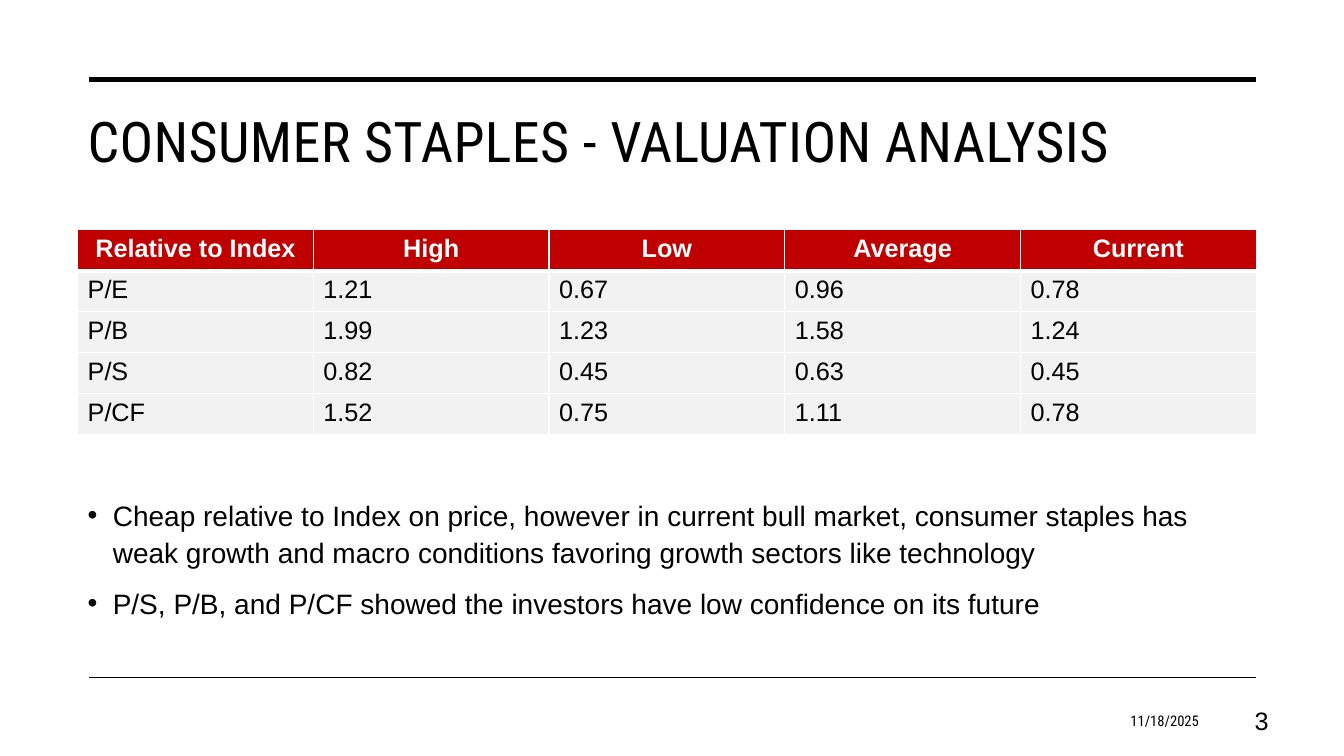
from dataclasses import dataclass

from lxml.etree import SubElement
from pptx import Presentation
from pptx.dml.color import RGBColor as Rgb
from pptx.enum.shapes import MSO_CONNECTOR as Conn
from pptx.enum.text import MSO_ANCHOR as Anchor, PP_ALIGN as Align
from pptx.oxml.ns import qn
from pptx.util import Inches, Pt


@dataclass(frozen=True)
class Theme:
    """Hold the colours, fonts and type sizes of the slide."""
    black: str = "000000"
    white: str = "FFFFFF"
    red: str = "C00000"
    grey: str = "F2F2F2"
    head: str = "Roboto Condensed"
    body: str = "Arial"
    title: float = 40
    point: float = 20
    cell: float = 18
    date: float = 10.5


T = Theme()
LEFT, WIDTH = 0.77, 11.69
ROWS = [
    ("Relative to Index", "High", "Low", "Average", "Current"),
    ("P/E", "1.21", "0.67", "0.96", "0.78"),
    ("P/B", "1.99", "1.23", "1.58", "1.24"),
    ("P/S", "0.82", "0.45", "0.63", "0.45"),
    ("P/CF", "1.52", "0.75", "1.11", "0.78"),
]
POINTS = [
    "Cheap relative to Index on price, however in current bull market, "
    "consumer staples has weak growth and macro conditions favoring growth "
    "sectors like technology",
    "P/S, P/B, and P/CF showed the investors have low confidence on its future",
]


def write(para, text, size=T.cell, font=T.body, color=T.black, bold=False,
          align=Align.LEFT, track=0):
    """Write one formatted run into a paragraph."""
    para.alignment = align
    run = para.add_run()
    run.text = text
    face = run.font
    face.size, face.name, face.bold = Pt(size), font, bold
    face.color.rgb = Rgb.from_string(color)
    if track:
        run._r.get_or_add_rPr().set("spc", str(round(track * 100)))


def add_box(slide, left, top, width, height, anchor=Anchor.TOP):
    """Add a wrapping text box and return its text frame."""
    box = slide.shapes.add_textbox(*map(Inches, (left, top, width, height)))
    frame = box.text_frame
    frame.word_wrap = True
    frame.vertical_anchor = anchor
    return frame


def add_rule(slide, top, weight):
    """Draw a horizontal rule across the content."""
    start, end, y = Inches(0.88), Inches(12.46), Inches(top)
    rule = slide.shapes.add_connector(Conn.STRAIGHT, start, y, end, y)
    rule.line.width = Pt(weight)
    rule.line.color.rgb = Rgb.from_string(T.black)
    SubElement(rule._element.spPr, qn("a:effectLst"))


def add_edges(cell, base):
    """Give a cell white borders, with its own weight at the base."""
    props = cell._tc.get_or_add_tcPr()
    weights = {"lnL": 1, "lnR": 1, "lnT": 1, "lnB": base}
    for spot, (tag, weight) in enumerate(weights.items()):
        edge = SubElement(props, qn(f"a:{tag}"), w=str(Pt(weight)))
        fill = SubElement(edge, qn("a:solidFill"))
        SubElement(fill, qn("a:srgbClr"), val=T.white)
        props.insert(spot, edge)


def add_grid(slide, rows):
    """Add the valuation table with a red header row."""
    count = len(rows[0])
    place = map(Inches, (LEFT, 2.28, WIDTH, 2.03))
    grid = slide.shapes.add_table(len(rows), count, *place).table
    for col in grid.columns:
        col.width = Inches(WIDTH / count)
    for i, row in enumerate(rows):
        top = i == 0
        style = (dict(color=T.white, bold=True, align=Align.CENTER)
                 if top else {})
        for j, text in enumerate(row):
            cell = grid.cell(i, j)
            cell.fill.solid()
            cell.fill.fore_color.rgb = Rgb.from_string(T.red if top else T.grey)
            add_edges(cell, 3 if top else 1)
            write(cell.text_frame.paragraphs[0], text, **style)


def add_points(slide, points):
    """Add the bulleted remarks below the table."""
    frame = add_box(slide, LEFT, 4.86, WIDTH, 1.63)
    for i, text in enumerate(points):
        para = frame.add_paragraph() if i else frame.paragraphs[0]
        para.line_spacing, para.space_before = 1.1, Pt(10)
        write(para, text, size=T.point)
        props = para._p.get_or_add_pPr()
        props.set("marL", str(Inches(0.25)))
        props.set("indent", str(Inches(-0.25)))
        SubElement(props, qn("a:buFont"), typeface=T.body)
        SubElement(props, qn("a:buChar"), char="•")


def add_foot(slide, left, width, text, **style):
    """Add a right-aligned footer text."""
    frame = add_box(slide, left, 6.95, width, 0.4, Anchor.MIDDLE)
    write(frame.paragraphs[0], text, align=Align.RIGHT, **style)


def main():
    """Build the slide and save it."""
    deck = Presentation()
    deck.slide_width, deck.slide_height = Inches(13.33), Inches(7.5)
    slide = deck.slides.add_slide(deck.slide_layouts[6])
    add_rule(slide, 0.79, 3.5)
    add_rule(slide, 6.72, 1)
    add_grid(slide, ROWS)
    add_foot(slide, 9.15, 2.84, "11/18/2025", size=T.date, font=T.head)
    add_foot(slide, 11.94, 0.74, "3")
    title = add_box(slide, LEFT, 1.01, WIDTH, 1.5)
    write(title.paragraphs[0], "CONSUMER STAPLES - VALUATION ANALYSIS",
          size=T.title, font=T.head, track=0.3)
    add_points(slide, POINTS)
    deck.save("out.pptx")


if __name__ == "__main__":
    main()
